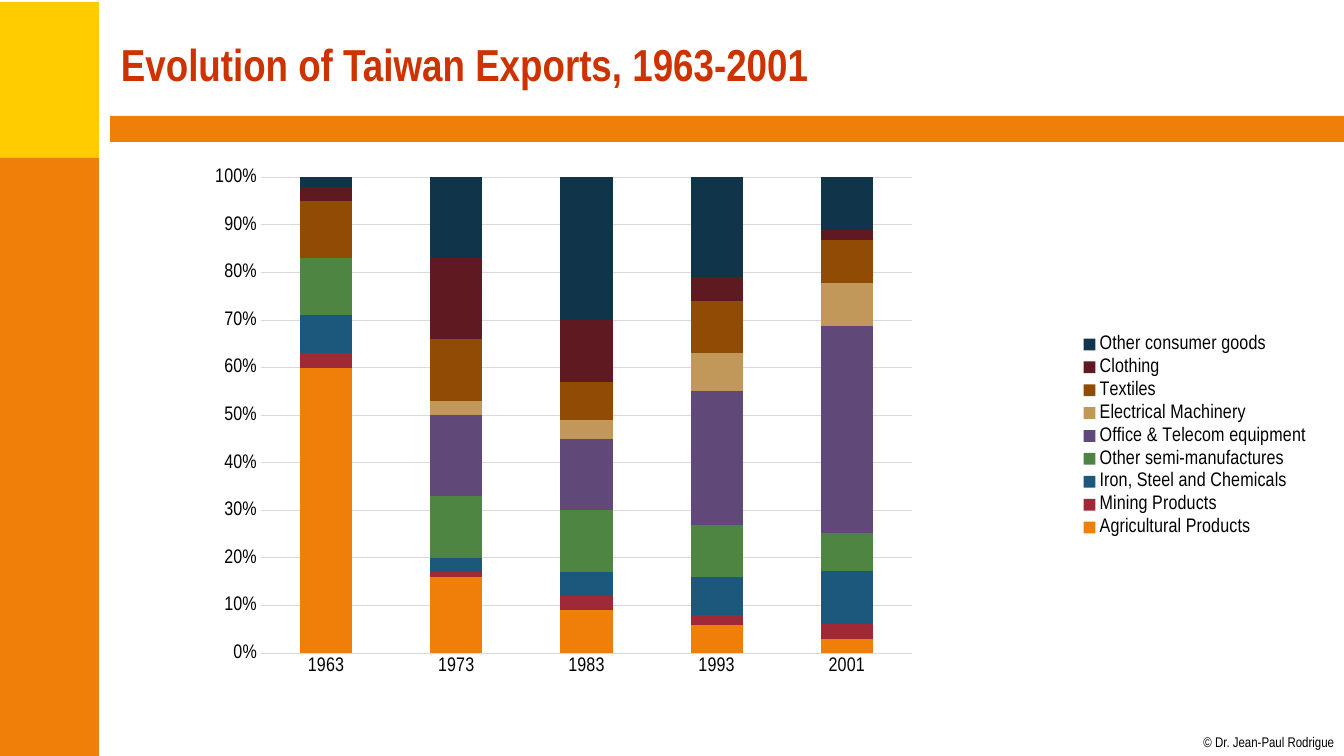
from lxml.etree import SubElement
from pptx import Presentation
from pptx.chart.data import CategoryChartData
from pptx.dml.color import RGBColor
from pptx.enum.chart import XL_CHART_TYPE, XL_LEGEND_POSITION, XL_TICK_MARK
from pptx.enum.shapes import MSO_SHAPE
from pptx.enum.text import MSO_ANCHOR, PP_ALIGN
from pptx.oxml.ns import qn
from pptx.util import Pt

# Content
TITLE = "Evolution of Taiwan Exports, 1963-2001"
CREDIT = "© Dr. Jean-Paul Rodrigue"
YEARS = ["1963", "1973", "1983", "1993", "2001"]
EXPORTS = [
    ("Agricultural Products", "F07F09", (60, 16, 9, 6, 3)),
    ("Mining Products", "9F2936", (3, 1, 3, 2, 3)),
    ("Iron, Steel and Chemicals", "1B587C", (8, 3, 5, 8, 11)),
    ("Other semi-manufactures", "4E8542", (12, 13, 13, 11, 8)),
    ("Office & Telecom equipment", "604878", (0, 17, 15, 28, 43)),
    ("Electrical Machinery", "C19859", (0, 3, 4, 8, 9)),
    ("Textiles", "904C05", (12, 13, 8, 11, 9)),
    ("Clothing", "5F1920", (3, 17, 13, 5, 2)),
    ("Other consumer goods", "10354A", (2, 17, 30, 21, 11)),
]
BANDS = [
    ("FFCC00", (-2, 2, 101, 159)),
    ("F07F09", (-2, 158, 101, 598)),
    ("F07F09", (110, 116, 1234, 26)),
]
PLOT_AREA = {"x": 0.124, "y": 0.057, "w": 0.538, "h": 0.815}
FONT = "Arial Narrow"
GRID = "D9D9D9"
EMU_PER_PX = 914400 / 100.8


def px(*lengths):
    return [round(length * EMU_PER_PX) for length in lengths]


def color(hex_string):
    return RGBColor.from_string(hex_string)


def set_font(font, size, hex_string="000000", bold=False):
    font.name, font.size, font.bold = FONT, Pt(size), bold
    font.color.rgb = color(hex_string)


def add_text(text, box, size, hex_string="000000", bold=False,
             align=PP_ALIGN.LEFT, anchor=MSO_ANCHOR.TOP, inset=(0, 0), wrap=True):
    frame = slide.shapes.add_textbox(*px(*box)).text_frame
    frame.word_wrap = wrap
    frame.vertical_anchor = anchor
    frame.margin_left = frame.margin_right = px(inset[0])[0]
    frame.margin_top = frame.margin_bottom = px(inset[1])[0]
    paragraph = frame.paragraphs[0]
    paragraph.alignment = align
    run = paragraph.add_run()
    run.text = text
    set_font(run.font, size, hex_string, bold)


def style_line(line, hex_string):
    line.color.rgb = color(hex_string)
    line.width = Pt(0.75)


presentation = Presentation()
presentation.slide_width, presentation.slide_height = px(1344, 756)
slide = presentation.slides.add_slide(presentation.slide_layouts[6])

# Side and header bands
for fill, box in BANDS:
    band = slide.shapes.add_shape(MSO_SHAPE.RECTANGLE, *px(*box))
    band.shadow.inherit = False
    band.fill.solid()
    band.fill.fore_color.rgb = color(fill)
    band.line.fill.background()

# Credit and title
add_text(CREDIT, (1202, 734, 132, 17), 10, align=PP_ALIGN.RIGHT, wrap=False)
add_text(TITLE, (111, 11, 1210, 105), 32, "CC3300", bold=True,
         anchor=MSO_ANCHOR.MIDDLE, inset=(10, 5))

# Export shares
shares = CategoryChartData(number_format="0")
shares.categories = YEARS
for product, _, values in EXPORTS:
    shares.add_series(product, values)
chart = slide.shapes.add_chart(XL_CHART_TYPE.COLUMN_STACKED_100,
                               *px(111, 144, 1210, 584), shares).chart
chart.has_title = False
set_font(chart.font, 14)

columns = chart.plots[0]
columns.gap_width, columns.overlap = 150, 100
columns.vary_by_categories = False
for series, (_, fill, _) in zip(columns.series, EXPORTS):
    series.format.fill.solid()
    series.format.fill.fore_color.rgb = color(fill)
    series.invert_if_negative = False

# Axes
year_axis, share_axis = chart.category_axis, chart.value_axis
for axis in (year_axis, share_axis):
    axis.major_tick_mark = axis.minor_tick_mark = XL_TICK_MARK.NONE
    set_font(axis.tick_labels.font, 14)
style_line(year_axis.format.line, GRID)
share_axis.format.line.fill.background()
share_axis.minimum_scale, share_axis.maximum_scale = 0, 1
share_axis.major_unit = 0.1
share_axis.tick_labels.number_format = "0%"
share_axis.tick_labels.number_format_is_linked = False
style_line(share_axis.major_gridlines.format.line, GRID)

# Legend
chart.has_legend = True
chart.legend.position = XL_LEGEND_POSITION.RIGHT
chart.legend.include_in_layout = False
set_font(chart.legend.font, 14)

# Fixed inner plot area
plot_area = columns._element.getparent()
for old_layout in plot_area.findall(qn("c:layout")):
    plot_area.remove(old_layout)
layout = SubElement(plot_area, qn("c:layout"))
plot_area.insert(0, layout)
manual = SubElement(layout, qn("c:manualLayout"))
settings = [("layoutTarget", "inner"), ("xMode", "edge"), ("yMode", "edge")]
for tag, value in settings + list(PLOT_AREA.items()):
    SubElement(manual, qn(f"c:{tag}")).set("val", str(value))

presentation.save("out.pptx")
